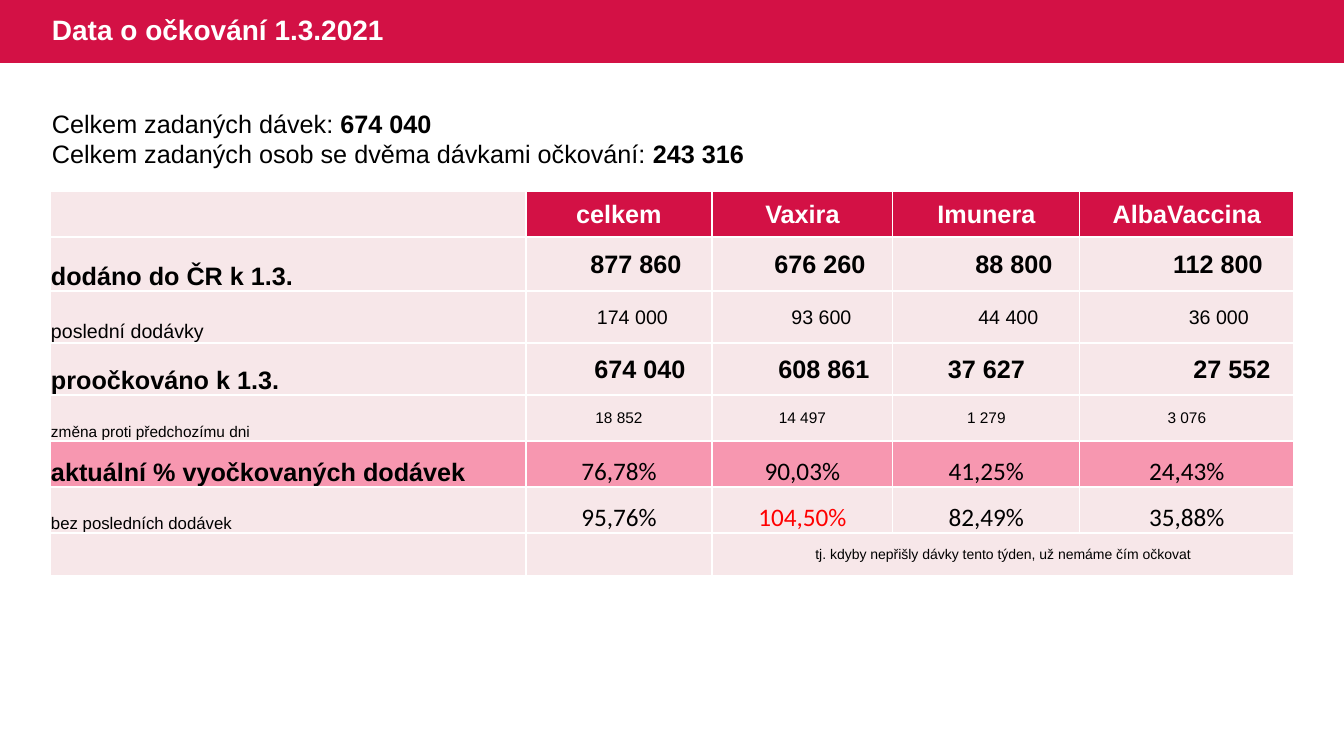
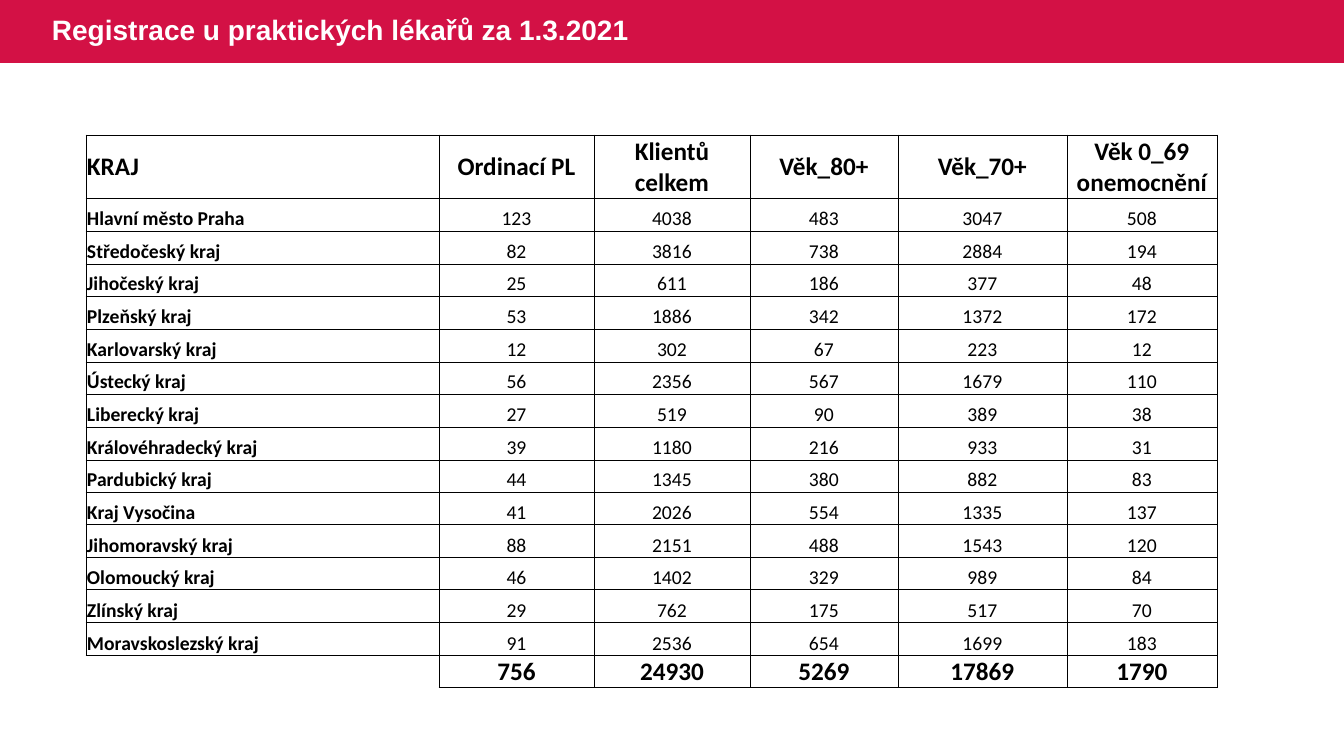
from lxml import etree
from pptx import Presentation
from pptx.dml.color import RGBColor
from pptx.enum.shapes import MSO_SHAPE
from pptx.enum.text import MSO_ANCHOR, PP_ALIGN
from pptx.oxml.ns import qn
from pptx.util import Emu, Pt

WIDTH, HEIGHT = 1344, 756
EMU_PER_PX = 12192000 / WIDTH

CRIMSON = RGBColor(0xD3, 0x11, 0x45)
BLUSH = RGBColor(0xF7, 0xE7, 0xE9)
PINK = RGBColor(0xF7, 0x97, 0xB0)
RED = RGBColor(0xFF, 0x00, 0x00)
BLACK = RGBColor(0x00, 0x00, 0x00)
WHITE = RGBColor(0xFF, 0xFF, 0xFF)

SANS, TABULAR = "Arial", "Calibri"
LEFT, CENTER = PP_ALIGN.LEFT, PP_ALIGN.CENTER
MIDDLE, BOTTOM = MSO_ANCHOR.MIDDLE, MSO_ANCHOR.BOTTOM
RECTANGLE = MSO_SHAPE.RECTANGLE
BAND_HEIGHT = 63
NO_INDENTS = (0, 0, 0, 0)

VACCINES = ["celkem", "Vaxira", "Imunera", "AlbaVaccina"]
DELIVERIES = [
    ("dodáno do ČR k 1.3.", 18, True,
     ["877 860", "676 260", "88 800", "112 800"], (34, 35, 55, 62)),
    ("poslední dodávky", 14, False,
     ["174 000", "93 600", "44 400", "36 000"], (27, 38, 44, 64)),
    ("proočkováno k 1.3.", 18, True,
     ["674 040", "608 861", "37 627", "27 552"], (42, 43, 0, 90)),
    ("změna proti předchozímu dni", 11, False,
     ["18 852", "14 497", "1 279", "3 076"], NO_INDENTS),
]
SHARES = [
    ("aktuální % vyočkovaných dodávek", 18, True, PINK,
     ["76,78%", "90,03%", "41,25%", "24,43%"]),
    ("bez posledních dodávek", 12, False, BLUSH,
     ["95,76%", "104,50%", "82,49%", "35,88%"]),
]

REGION_HEADS = ["KRAJ", "Ordinací PL", "Klientů\ncelkem", "Věk_80+",
                "Věk_70+", "Věk 0_69 onemocnění"]
REGIONS = [
    ("Hlavní město Praha", 123, 4038, 483, 3047, 508),
    ("Středočeský kraj", 82, 3816, 738, 2884, 194),
    ("Jihočeský kraj", 25, 611, 186, 377, 48),
    ("Plzeňský kraj", 53, 1886, 342, 1372, 172),
    ("Karlovarský kraj", 12, 302, 67, 223, 12),
    ("Ústecký kraj", 56, 2356, 567, 1679, 110),
    ("Liberecký kraj", 27, 519, 90, 389, 38),
    ("Královéhradecký kraj", 39, 1180, 216, 933, 31),
    ("Pardubický kraj", 44, 1345, 380, 882, 83),
    ("Kraj Vysočina", 41, 2026, 554, 1335, 137),
    ("Jihomoravský kraj", 88, 2151, 488, 1543, 120),
    ("Olomoucký kraj", 46, 1402, 329, 989, 84),
    ("Zlínský kraj", 29, 762, 175, 517, 70),
    ("Moravskoslezský kraj", 91, 2536, 654, 1699, 183),
]
TOTALS = [756, 24930, 5269, 17869, 1790]


def px(n):
    return Emu(round(n * EMU_PER_PX))


def add_run(p, text, size, font=SANS, color=BLACK, bold=False):
    r = p.add_run()
    r.text = text
    r.font.size = Pt(size)
    r.font.name = font
    r.font.color.rgb = color
    r.font.bold = bold


def add_text_box(s, x, y, w, h):
    tf = s.shapes.add_textbox(px(x), px(y), px(w), px(h)).text_frame
    tf.word_wrap = True
    return tf


def add_titled_slide(prs, title):
    s = prs.slides.add_slide(prs.slide_layouts[6])
    band = s.shapes.add_shape(RECTANGLE, 0, 0, px(WIDTH), px(BAND_HEIGHT))
    band.shadow.inherit = False
    band.fill.solid()
    band.fill.fore_color.rgb = CRIMSON
    band.line.fill.background()
    tf = add_text_box(s, 42, 0, 675, BAND_HEIGHT)
    tf.vertical_anchor = MIDDLE
    p = tf.paragraphs[0]
    p.line_spacing = 0.9
    add_run(p, title, 20, color=WHITE, bold=True)
    return s


def set_borders(cell, color, width, sides="LRTB"):
    tcPr = cell._tc.get_or_add_tcPr()
    for side in "LRTB":
        ln = etree.SubElement(tcPr, qn(f"a:ln{side}"), w=str(Pt(width)))
        if side in sides:
            fill = etree.SubElement(ln, qn("a:solidFill"))
            etree.SubElement(fill, qn("a:srgbClr"), val=str(color))
        else:
            etree.SubElement(ln, qn("a:noFill"))


def add_grid(s, x, y, widths, heights):
    table = s.shapes.add_table(len(heights), len(widths), px(x), px(y),
                               px(sum(widths)), px(sum(heights))).table
    table.first_row = False
    table.horz_banding = False
    for column, width in zip(table.columns, widths):
        column.width = px(width)
    for row, height in zip(table.rows, heights):
        row.height = px(height)
    for cell in table.iter_cells():
        cell.margin_left = cell.margin_right = cell.margin_top = px(1)
        cell.margin_bottom = 0
    return table


def fill_cell(cell, color):
    cell.fill.solid()
    cell.fill.fore_color.rgb = color


def write_cell(cell, text, size, align=CENTER, anchor=MIDDLE, indent=0, **style):
    cell.vertical_anchor = anchor
    cell.margin_left = px(1 + indent)
    tf = cell.text_frame
    for i, line in enumerate(str(text).split("\n")):
        p = tf.add_paragraph() if i else tf.paragraphs[0]
        p.alignment = align
        add_run(p, line, size, **style)


def add_vaccination_slide(prs):
    s = add_titled_slide(prs, "Data o očkování 1.3.2021")
    tf = add_text_box(s, 42, 103, 1253, 102)
    summary = [("Celkem zadaných dávek: ", "674 040"),
               ("Celkem zadaných osob se dvěma dávkami očkování: ", "243 316")]
    for i, (label, count) in enumerate(summary):
        p = tf.add_paragraph() if i else tf.paragraphs[0]
        add_run(p, label, 18)
        add_run(p, count, 18, bold=True)

    table = add_grid(s, 50, 191, [476, 186, 181, 187, 214],
                     [46, 54, 52, 52, 46, 46, 46, 43])
    for cell in table.iter_cells():
        set_borders(cell, WHITE, 1)
        fill_cell(cell, BLUSH)

    for col, name in enumerate(VACCINES, 1):
        fill_cell(table.cell(0, col), CRIMSON)
        write_cell(table.cell(0, col), name, 18, color=WHITE, bold=True)

    for row, (label, size, bold, values, indents) in enumerate(DELIVERIES, 1):
        write_cell(table.cell(row, 0), label, size, LEFT, BOTTOM, bold=bold)
        for col, (value, indent) in enumerate(zip(values, indents), 1):
            write_cell(table.cell(row, col), value, size, indent=indent, bold=bold)

    for row, (label, size, bold, fill, values) in enumerate(SHARES, 5):
        write_cell(table.cell(row, 0), label, size, LEFT, BOTTOM, bold=bold)
        fill_cell(table.cell(row, 0), fill)
        for col, value in enumerate(values, 1):
            fill_cell(table.cell(row, col), fill)
            write_cell(table.cell(row, col), value, 18, anchor=BOTTOM, font=TABULAR,
                       color=RED if value == "104,50%" else BLACK)

    note = table.cell(7, 2)
    note.merge(table.cell(7, 4))
    write_cell(note, "tj. kdyby nepřišly dávky tento týden, už nemáme čím očkovat", 10)


def add_registration_slide(prs):
    s = add_titled_slide(prs, "Registrace u praktických lékařů za 1.3.2021")
    table = add_grid(s, 86, 135, [353, 155, 156, 148, 169, 150],
                     [63] + [33, 33, 32] * 5)
    total_row = len(REGIONS) + 1
    corner = table.cell(total_row, 0)
    for cell in table.iter_cells():
        set_borders(cell, BLACK, 0.5, "TR" if cell == corner else "LRTB")
        cell.fill.background()

    for col, head in enumerate(REGION_HEADS):
        write_cell(table.cell(0, col), head, 18, CENTER if col else LEFT,
                   font=TABULAR, bold=True)
    for row, region in enumerate(REGIONS, 1):
        for col, value in enumerate(region):
            write_cell(table.cell(row, col), value, 14, CENTER if col else LEFT,
                       BOTTOM, font=TABULAR, bold=col == 0)
    for col, total in enumerate(TOTALS, 1):
        write_cell(table.cell(total_row, col), total, 18, anchor=BOTTOM,
                   font=TABULAR, bold=True)


def main():
    prs = Presentation()
    prs.slide_width, prs.slide_height = px(WIDTH), px(HEIGHT)
    add_vaccination_slide(prs)
    add_registration_slide(prs)
    prs.save("out.pptx")


if __name__ == "__main__":
    main()
